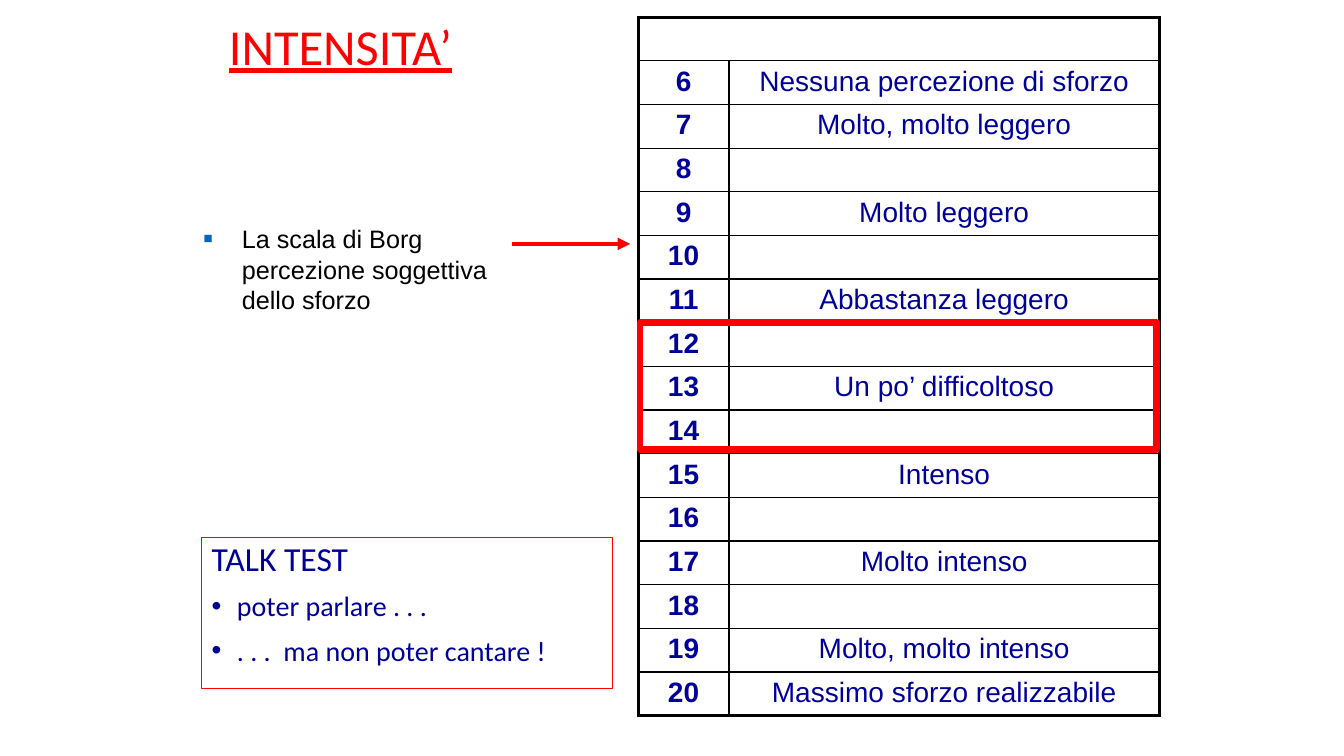
from lxml import etree
from pptx import Presentation
from pptx.dml.color import RGBColor
from pptx.enum.shapes import MSO_CONNECTOR, MSO_SHAPE
from pptx.enum.text import MSO_ANCHOR, MSO_AUTO_SIZE, PP_ALIGN
from pptx.oxml.ns import qn
from pptx.util import Inches, Pt

RED = RGBColor(0xFF, 0, 0)
NAVY = RGBColor(0, 0, 0x99)
BLUE = RGBColor(0x05, 0x63, 0xC1)
BLACK = RGBColor(0, 0, 0)
LEFT, CENTER = PP_ALIGN.LEFT, PP_ALIGN.CENTER
TOP = MSO_ANCHOR.TOP
NO_FIT = MSO_AUTO_SIZE.NONE
RECT = MSO_SHAPE.RECTANGLE
LINE = MSO_CONNECTOR.STRAIGHT
THIN, THICK = 1, 2.25

SCALE = {
    6: "Nessuna percezione di sforzo",
    7: "Molto, molto leggero",
    9: "Molto leggero",
    11: "Abbastanza leggero",
    13: "Un po’ difficoltoso",
    15: "Intenso",
    17: "Molto intenso",
    19: "Molto, molto intenso",
    20: "Massimo sforzo realizzabile",
}


def add(parent, tag, **attrs):
    return etree.SubElement(parent, qn(tag), attrs)


def write(para, text, size=20, font="Arial", color=NAVY, bold=False,
          under=False, align=LEFT, space=None, before=0):
    para.text = text
    para.alignment = align
    para.line_spacing = space
    para.space_before = Pt(before)
    for run in para.runs:
        face = run.font
        face.size, face.name = Pt(size), font
        face.bold, face.underline = bold, under
        face.color.rgb = color


def indent(para, size, mark=None, color=None, scale=None):
    props = para._p.get_or_add_pPr()
    props.set("marL", str(Inches(size)))
    props.set("indent", str(-Inches(size)))
    if color:
        add(add(props, "a:buClr"), "a:srgbClr", val=str(color))
    if scale:
        add(props, "a:buSzPct", val=str(scale * 1000))
    if mark:
        add(props, "a:buFont", typeface="Arial")
        add(props, "a:buChar", char=mark)
    else:
        add(props, "a:buNone")


def border(cell, **widths):
    props = cell._tc.get_or_add_tcPr()
    for side in "LRTB":
        line = add(props, "a:ln" + side, w=str(Pt(widths.get(side, THIN))))
        add(add(line, "a:solidFill"), "a:srgbClr", val=str(BLACK))


class Page:
    def __init__(self, deck):
        self.slide = deck.slides.add_slide(deck.slide_layouts[1])
        self.shapes = self.slide.shapes

    def place(self, shape, *box):
        shape.left, shape.top, shape.width, shape.height = map(Inches, box)
        frame = shape.text_frame
        frame.word_wrap = True
        frame.auto_size = NO_FIT
        frame.vertical_anchor = TOP
        return frame

    def title(self, text, *box):
        frame = self.place(self.shapes.title, *box)
        write(frame.paragraphs[0], text, size=36, font="Calibri", color=RED,
              under=True, space=0.9)

    def body(self, head, items, *box):
        shape = self.slide.placeholders[1]
        frame = self.place(shape, *box)
        shape.line.color.rgb = RED
        shape.line.width = Pt(0.75)
        style = {"font": "Calibri", "space": 0.9, "before": 10}
        first = frame.paragraphs[0]
        write(first, head, size=24, **style)
        indent(first, 0.25)
        for item in items:
            para = frame.add_paragraph()
            write(para, item, **style)
            indent(para, 0.25, "•")

    def note(self, text, *box):
        shape = self.shapes.add_textbox(*map(Inches, box))
        para = self.place(shape, *box).paragraphs[0]
        write(para, text, size=18, color=BLACK)
        indent(para, 0.38, "■", BLUE, 60)

    def table(self, scale, cols, left, top, width, height):
        levels = range(min(scale), max(scale) + 1)
        count = len(levels) + 1
        grid = self.shapes.add_table(
            count, len(cols), *map(Inches, (left, top, width, height))).table
        grid.first_row = grid.horz_banding = False
        for col, size in zip(grid.columns, cols):
            col.width = Inches(size)
        for row in grid.rows:
            row.height = Inches(height / count)
        grid.cell(0, 0).merge(grid.cell(0, 1))
        for i, level in enumerate(levels, 1):
            write(grid.cell(i, 0).text_frame.paragraphs[0], str(level),
                  bold=True, align=CENTER)
            write(grid.cell(i, 1).text_frame.paragraphs[0],
                  scale.get(level, ""), align=CENTER)
        for i in range(count):
            edges = {"T": THIN if i else THICK,
                     "B": THIN if i < count - 1 else THICK}
            for j, side in enumerate("LR"):
                cell = grid.cell(i, j)
                ends = {side: THICK} if i else {"L": THICK, "R": THICK}
                border(cell, **edges, **ends)
                cell.fill.background()

    def arrow(self, *ends):
        line = self.shapes.add_connector(LINE, *map(Inches, ends))
        line.line.color.rgb = RED
        line.line.width = Pt(3)
        add(line.line._get_or_add_ln(), "a:tailEnd", type="triangle")
        add(line._element.spPr, "a:effectLst")

    def frame(self, *box):
        shape = self.shapes.add_shape(RECT, *map(Inches, box))
        shape.shadow.inherit = False
        shape.fill.background()
        shape.line.color.rgb = RED
        shape.line.width = Pt(4.5)


def main():
    deck = Presentation()
    deck.slide_width, deck.slide_height = Inches(13.33), Inches(7.5)
    page = Page(deck)
    page.title("INTENSITA’", 2.17, 0.17, 3.83, 1.17)
    page.table(SCALE, (0.9, 4.27), 6.33, 0.17, 5.17, 6.93)
    page.body("TALK TEST",
              ("poter parlare . . .", ". . .  ma non poter cantare !"),
              2, 5.33, 4.08, 1.5)
    page.note("La scala di Borg\vpercezione soggettiva \vdello sforzo",
              1.92, 2.17, 4.25, 1.5)
    page.arrow(5.08, 2.42, 6.25, 2.42)
    page.frame(6.35, 3.2, 5.12, 1.26)
    deck.save("out.pptx")


if __name__ == "__main__":
    main()
